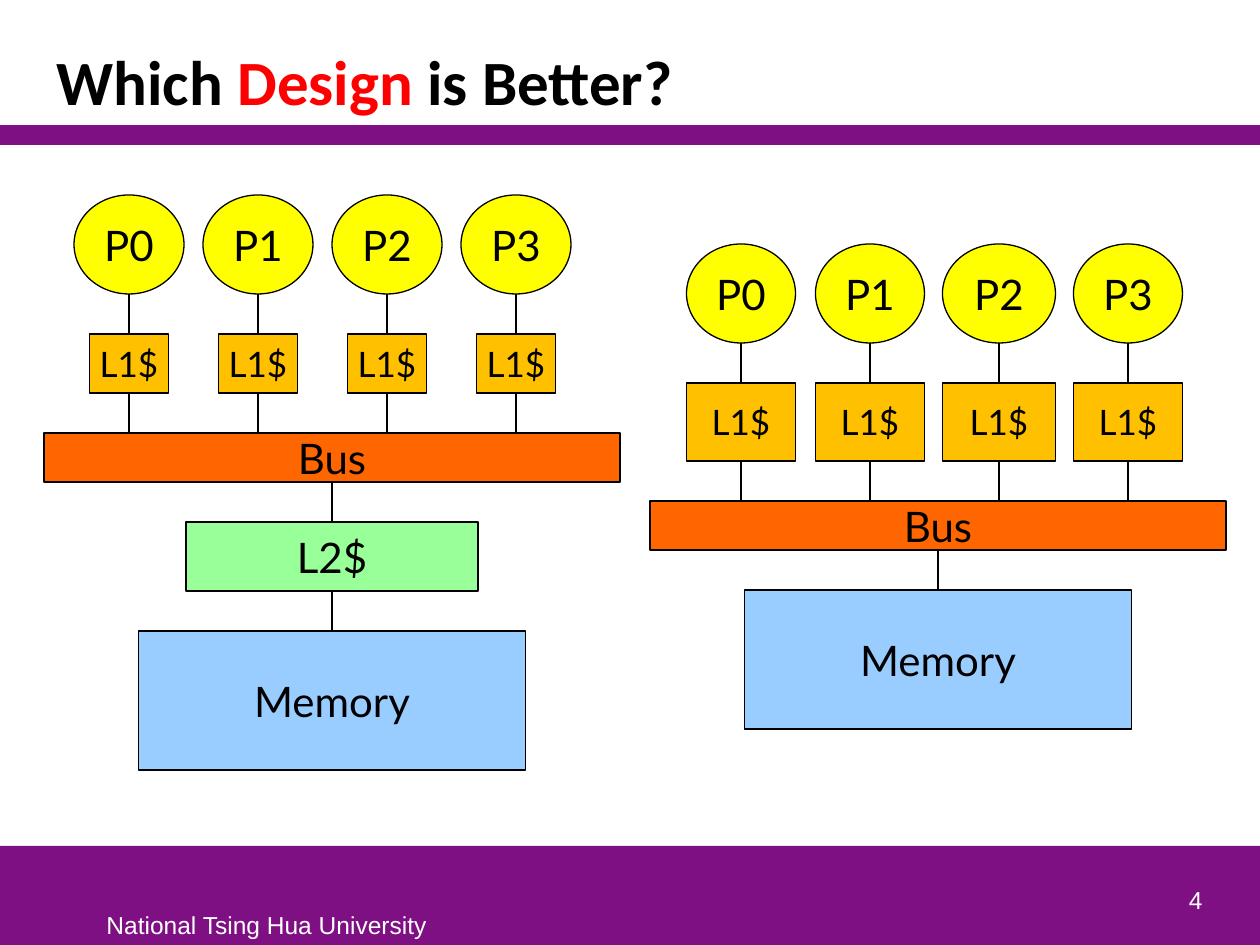
from lxml import etree
from pptx import Presentation
from pptx import util as u
from pptx.dml.color import RGBColor
from pptx.enum import shapes, text
from pptx.oxml.ns import qn

PX = 914400 / 126
BLACK = RGBColor(0x00, 0x00, 0x00)
WHITE = RGBColor(0xFF, 0xFF, 0xFF)
RED = RGBColor(0xFF, 0x00, 0x00)
PURPLE = RGBColor(0x7F, 0x10, 0x84)
YELLOW = RGBColor(0xFF, 0xFF, 0x00)
AMBER = RGBColor(0xFF, 0xC0, 0x00)
ORANGE = RGBColor(0xFF, 0x66, 0x00)
GREEN = RGBColor(0x99, 0xFF, 0x99)
BLUE = RGBColor(0x99, 0xCC, 0xFF)
RECT, OVAL = shapes.MSO_SHAPE.RECTANGLE, shapes.MSO_SHAPE.OVAL
LEFT, CENTER, RIGHT = text.PP_ALIGN.LEFT, text.PP_ALIGN.CENTER, text.PP_ALIGN.RIGHT
MIDDLE, BOTTOM = text.MSO_ANCHOR.MIDDLE, text.MSO_ANCHOR.BOTTOM


def add_text(parent, label, box, *, kind=None, fill=None, line=BLACK, size=24,
             font="Lato", color=BLACK, align=CENTER, anchor=MIDDLE, wrap=False):
    """Add a filled preset shape, or a text box when kind is None; box is x, y, w, h in px."""
    box = [round(v * PX) for v in box]
    if kind is None:
        sp = parent.add_textbox(*box)
    else:
        sp = parent.add_shape(kind, *box)
        sp.shadow.inherit = False
        sp.fill.solid()
        sp.fill.fore_color.rgb = fill
        if line is None:
            sp.line.fill.background()
        else:
            sp.line.color.rgb = line
            sp.line.width = u.Pt(0.75)
    tf = sp.text_frame
    tf.word_wrap = wrap
    tf.vertical_anchor = anchor
    if label:
        if kind is not None:
            tf.margin_left = tf.margin_right = tf.margin_top = tf.margin_bottom = 0
        p = tf.paragraphs[0]
        p.alignment = align
        r = p.add_run()
        r.text = label
        r.font.size, r.font.name, r.font.color.rgb = u.Pt(size), font, color
    return sp


def add_line(parent, x, top, bottom, upper=None, lower=None):
    """Add a vertical line, joined to the rectangles above and below it if given."""
    c = parent.add_connector(shapes.MSO_CONNECTOR.STRAIGHT,
                             *[round(v * PX) for v in (x, top, x, bottom)])
    c.line.color.rgb = BLACK
    c.line.width = u.Pt(0.75)
    etree.SubElement(c._element.spPr, qn("a:effectLst"))
    if upper is not None:
        c.begin_connect(upper, 2)
    if lower is not None:
        c.end_connect(lower, 0)


prs = Presentation()
prs.slide_width, prs.slide_height = u.Inches(10), u.Inches(7.5)
s = prs.slides.add_slide(prs.slide_layouts[5])

# Frame and title
add_text(s.shapes, "", (0, 846, 1260, 99), kind=RECT, fill=PURPLE, line=None)
add_text(s.shapes, "", (0, 125, 1260, 20), kind=RECT, fill=PURPLE, line=None)
add_text(s.shapes, "National Tsing Hua University", (94, 904, 348, 41),
         size=14, font="Arial", color=WHITE, align=LEFT, anchor=text.MSO_ANCHOR.TOP)
add_text(s.shapes, "4", (952, 858, 263, 63), size=14, font="Arial", color=WHITE,
         align=RIGHT, anchor=BOTTOM, wrap=True)

title = s.shapes.title
title.left, title.top, title.width, title.height = [round(v * PX) for v in (44, 31, 1171, 94)]
tf = title.text_frame
tf.auto_size = text.MSO_AUTO_SIZE.NONE
tf.vertical_anchor = BOTTOM
p = tf.paragraphs[0]
p.alignment = LEFT
p.line_spacing = 0.85
for part, color in (("Which ", BLACK), ("Design", RED), (" is Better?", BLACK)):
    r = p.add_run()
    r.text = part
    r.font.size, r.font.name, r.font.bold = u.Pt(36), "Calibri", True
    r.font.color.rgb = color

# Two designs: first processor centre, processor top, processor widths,
# cache widths, cache height, bus left, blocks below the bus (name, width, height, fill)
PITCH, GAP, CPU_H, BUS_W, BUS_H = 129, 40, 99, 576, 49
memory = ("Memory", 387, 139, BLUE)
designs = [
    (129, 195, [110] * 4, [79] * 4, 59, 44, [("L2$", 292, 69, GREEN), memory]),
    (741, 244, [109, 109, 113, 109], [109, 109, 113, 109], 78, 650, [memory]),
]
for first, top, cpu_ws, cache_ws, cache_h, bus_x, blocks in designs:
    group = s.shapes.add_group_shape().shapes
    cache_y = top + CPU_H + GAP
    bus_y = cache_y + cache_h + GAP
    bus = add_text(group, "Bus", (bus_x, bus_y, BUS_W, BUS_H), kind=RECT, fill=ORANGE)
    for i, (cpu_w, cache_w) in enumerate(zip(cpu_ws, cache_ws)):
        x = first + i * PITCH
        add_text(group, f"P{i}", (x - cpu_w / 2, top, cpu_w, CPU_H), kind=OVAL, fill=YELLOW)
        cache = add_text(group, "L1$", (x - cache_w / 2, cache_y, cache_w, cache_h),
                         kind=RECT, fill=AMBER, size=20)
        add_line(group, x, top + CPU_H, cache_y, lower=cache)
        add_line(group, x, cache_y + cache_h, bus_y, upper=cache)

    x, upper, bottom = bus_x + BUS_W / 2, bus, bus_y + BUS_H
    for name, w, h, fill in blocks:
        y = bottom + GAP
        block = add_text(group, name, (x - w / 2, y, w, h), kind=RECT, fill=fill)
        add_line(group, x, bottom, y, upper=upper, lower=block)
        upper, bottom = block, y + h

prs.save("out.pptx")
